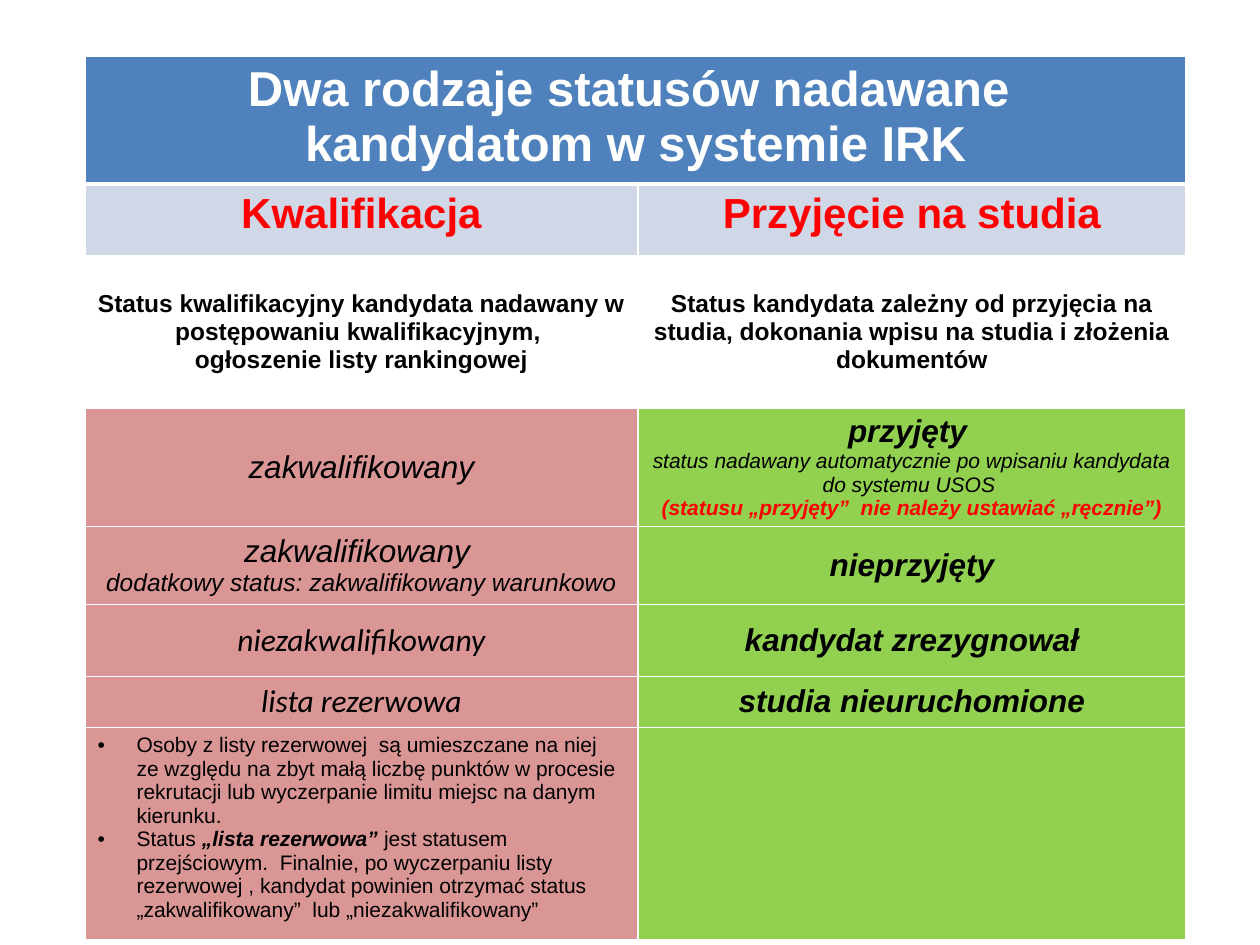
from dataclasses import dataclass, replace
from lxml.etree import SubElement
from pptx import Presentation
from pptx.dml.color import RGBColor
from pptx.enum.text import MSO_ANCHOR, PP_ALIGN
from pptx.oxml.ns import qn
from pptx.util import Emu, Pt

PX = 914400 / 126
COLORS = {
    "white": "FFFFFF", "black": "000000", "red": "FF0000", "blue": "4F81BD",
    "pale": "D0D8E8", "pink": "D99694", "green": "92D050",
}
COLUMN_WIDTHS = (553, 548)
ROW_HEIGHTS = (128, 72, 152, 118, 78, 72, 50, 212)
BULLET_INDENT = 39


@dataclass(frozen=True)
class Style:
    size: int
    color: str = "black"
    bold: bool = False
    italic: bool = False
    font: str = "Arial"


@dataclass(frozen=True)
class Span:
    text: str
    style: Style


@dataclass(frozen=True)
class CellContent:
    paras: tuple[tuple[Span, ...], ...] = ()
    fill: str | None = None
    middle: bool = True
    bullets: bool = False


TITLE = Style(28, "white", bold=True)
HEADING = Style(24, "red", bold=True)
SUMMARY = Style(14, bold=True)
STATUS = Style(18, italic=True)
STATUS_CALIBRI = replace(STATUS, font="Calibri")
STATUS_BOLD = replace(STATUS, bold=True)
DETAIL = Style(12, italic=True)
WARNING = Style(12, "red", bold=True, italic=True)
NOTE = Style(12)
NOTE_STRONG = Style(12, bold=True, italic=True)


def lines(*spans: Span) -> tuple[tuple[Span, ...], ...]:
    """Put each span in a paragraph of its own."""
    return tuple((span,) for span in spans)


def single(text: str, style: Style, fill: str | None, middle: bool = True) -> CellContent:
    """Content of one paragraph in one style."""
    return CellContent(lines(Span(text, style)), fill, middle)


ROWS = (
    (CellContent(lines(Span("Dwa rodzaje statusów nadawane ", TITLE),
                       Span("kandydatom w systemie IRK", TITLE)), "blue", middle=False),),
    (single("Kwalifikacja", HEADING, "pale", middle=False),
     single("Przyjęcie na studia", HEADING, "pale", middle=False)),
    (CellContent(lines(
        Span("Status kwalifikacyjny kandydata nadawany w postępowaniu kwalifikacyjnym, ", SUMMARY),
        Span("ogłoszenie listy rankingowej", SUMMARY))),
     single("Status kandydata zależny od przyjęcia na studia, dokonania wpisu na studia "
            "i złożenia dokumentów", SUMMARY, None)),
    (single("zakwalifikowany", STATUS, "pink"),
     CellContent(lines(
         Span("przyjęty ", STATUS_BOLD),
         Span("status nadawany automatycznie po wpisaniu kandydata do systemu USOS ", DETAIL),
         Span("(statusu „przyjęty”  nie należy ustawiać „ręcznie”)", WARNING)), "green")),
    (CellContent(lines(
        Span("zakwalifikowany ", STATUS),
        Span("dodatkowy status: zakwalifikowany warunkowo", replace(STATUS, size=14))), "pink"),
     single("nieprzyjęty", STATUS_BOLD, "green")),
    (single("niezakwalifikowany", STATUS_CALIBRI, "pink"),
     single("kandydat zrezygnował", STATUS_BOLD, "green")),
    (single("lista rezerwowa", STATUS_CALIBRI, "pink", middle=False),
     single("studia nieuruchomione", STATUS_BOLD, "green")),
    (CellContent((
        (Span("Osoby z listy rezerwowej  są umieszczane na niej ze względu na zbyt małą liczbę "
              "punktów w procesie rekrutacji lub wyczerpanie limitu miejsc na danym kierunku.",
              NOTE),),
        (Span("Status ", NOTE),
         Span("„lista rezerwowa” ", NOTE_STRONG),
         Span("jest statusem przejściowym.  Finalnie, po wyczerpaniu listy rezerwowej , kandydat "
              "powinien otrzymać status „zakwalifikowany”  lub „niezakwalifikowany”", NOTE)),
    ), "pink", middle=False, bullets=True),
     CellContent(fill="green")),
)


def px(length: int) -> Emu:
    return Emu(round(length * PX))


def rgb(name: str) -> RGBColor:
    return RGBColor.from_string(COLORS[name])


def add_borders(cell, widths: dict[str, int]) -> None:
    """Draw white borders; widths are points by side (L, R, T, B)."""
    properties = cell._tc.get_or_add_tcPr()
    for side, width in widths.items():
        line = SubElement(properties, qn(f"a:ln{side}"), w=str(Pt(width)))
        fill = SubElement(line, qn("a:solidFill"))
        SubElement(fill, qn("a:srgbClr"), val=COLORS["white"])


def add_bullet(para) -> None:
    properties = para._p.get_or_add_pPr()
    properties.set("marL", str(px(BULLET_INDENT)))
    properties.set("indent", str(-px(BULLET_INDENT)))
    SubElement(properties, qn("a:buFont"), typeface="Arial")
    SubElement(properties, qn("a:buChar"), char="•")


def write_span(para, span: Span) -> None:
    run = para.add_run()
    run.text = span.text
    font = run.font
    font.name = span.style.font
    font.size = Pt(span.style.size)
    font.bold = span.style.bold
    font.italic = span.style.italic
    font.color.rgb = rgb(span.style.color)


def fill_cell(cell, content: CellContent) -> None:
    if content.fill:
        cell.fill.solid()
        cell.fill.fore_color.rgb = rgb(content.fill)
    else:
        cell.fill.background()
    cell.vertical_anchor = MSO_ANCHOR.MIDDLE if content.middle else MSO_ANCHOR.TOP
    frame = cell.text_frame
    for index, spans in enumerate(content.paras):
        para = frame.add_paragraph() if index else frame.paragraphs[0]
        if content.bullets:
            add_bullet(para)
        else:
            para.alignment = PP_ALIGN.CENTER
        for span in spans:
            write_span(para, span)


def add_status_table(page) -> None:
    table = page.shapes.add_table(
        len(ROWS), len(COLUMN_WIDTHS), px(85), px(56),
        px(sum(COLUMN_WIDTHS)), px(sum(ROW_HEIGHTS))).table
    table.horz_banding = False
    table.first_row = False
    for column, width in zip(table.columns, COLUMN_WIDTHS):
        column.width = px(width)
    for row, height in zip(table.rows, ROW_HEIGHTS):
        row.height = px(height)
    table.cell(0, 0).merge(table.cell(0, 1))
    for row_index, contents in enumerate(ROWS):
        top = 3 if row_index == 1 else 1
        bottom = 3 if row_index == 0 else 1
        for column_index in range(len(COLUMN_WIDTHS)):
            cell = table.cell(row_index, column_index)
            add_borders(cell, {"L": 1, "R": 1, "T": top, "B": bottom})
        for column_index, content in enumerate(contents):
            fill_cell(table.cell(row_index, column_index), content)


def main() -> None:
    deck = Presentation()
    deck.slide_width, deck.slide_height = px(1260), px(945)
    page = deck.slides.add_slide(deck.slide_layouts[6])
    add_status_table(page)
    deck.save("out.pptx")


if __name__ == "__main__":
    main()
